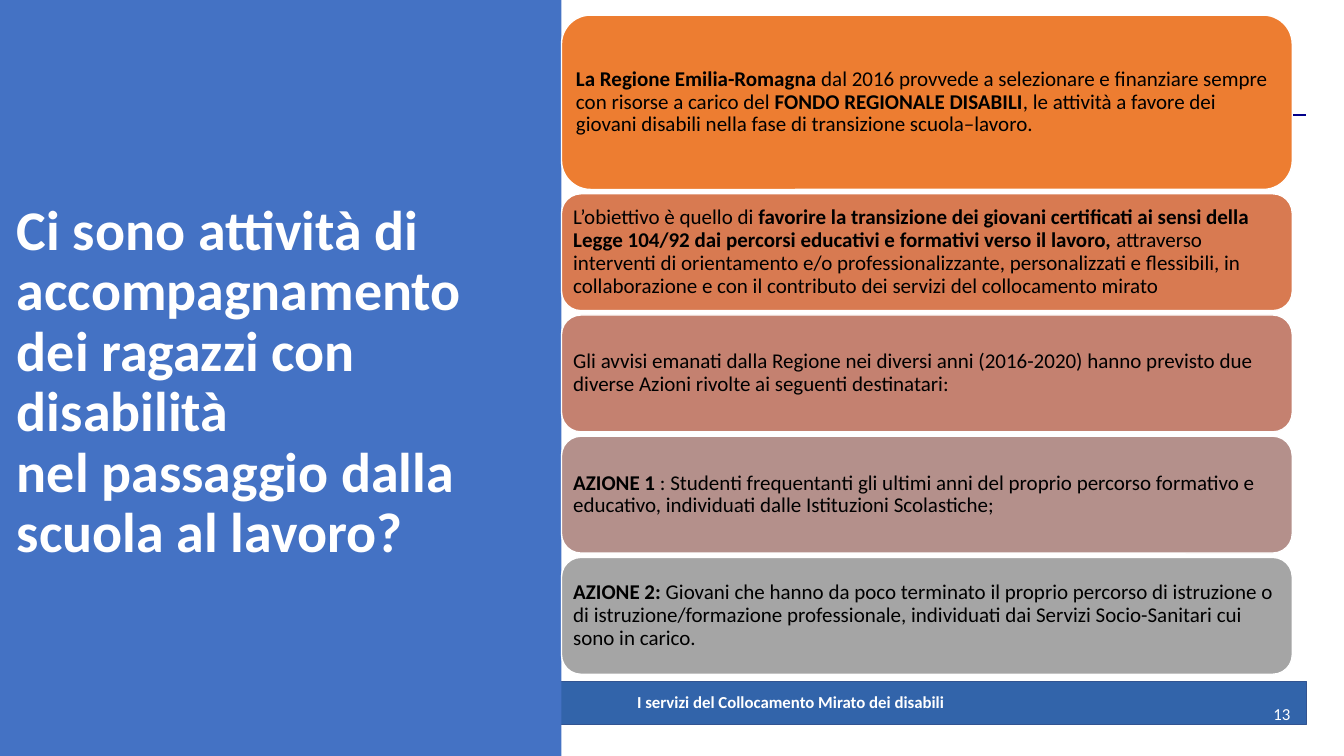
from dataclasses import dataclass

from lxml import etree
from pptx import Presentation, util as u
from pptx.dml.color import RGBColor
from pptx.enum import shapes, text
from pptx.oxml import ns


@dataclass(frozen=True)
class Theme:
    font: str = "Calibri"
    panel: str = "4472C4"
    bar: str = "3264AA"
    bar_edge: str = "325491"
    rule: str = "02008B"
    light: str = "FFFFFF"
    dark: str = "000000"
    cards: tuple = ("ED7D31", "D87A51", "C48170", "B4908B", "A5A5A5")
    title: int = 40
    body: int = 15
    small: int = 12


@dataclass(frozen=True)
class Box:
    x: float
    y: float
    w: float
    h: float

    def inner(self, x, y, w, h):
        return Box(self.x + x, self.y + y, w, h)

    def emu(self):
        return [u.Inches(v * CELL) for v in (self.x, self.y, self.w, self.h)]


T = Theme()
CELL = 0.1
SLIDE = Box(0, 0, 133.33, 75)
LEFT, CENTER, RIGHT = text.PP_ALIGN.LEFT, text.PP_ALIGN.CENTER, text.PP_ALIGN.RIGHT

TITLE = [
    "Ci sono attività di accompagnamento dei ragazzi con disabilità",
    "nel passaggio dalla scuola al lavoro?",
]
FOOTER = "I servizi del Collocamento Mirato dei disabili"
PAGE = "13"
CARDS = [
    [("La Regione Emilia-Romagna ", True),
     ("dal 2016 provvede a selezionare e finanziare sempre con risorse a carico del ", False),
     ("FONDO REGIONALE DISABILI", True),
     (", le attività a favore dei giovani disabili nella fase di transizione scuola–lavoro.", False)],
    [("L’obiettivo è quello di ", False),
     ("favorire la transizione dei giovani certificati ai sensi della Legge 104/92 "
      "dai percorsi educativi e formativi verso il lavoro, ", True),
     ("attraverso interventi di orientamento e/o professionalizzante, personalizzati e flessibili, "
      "in collaborazione e con il contributo dei servizi del collocamento mirato", False)],
    [("Gli avvisi emanati dalla Regione nei diversi anni (2016-2020) hanno previsto due "
      "diverse Azioni rivolte ai seguenti destinatari:", False)],
    [("AZIONE 1 ", True),
     (": Studenti frequentanti gli ultimi anni del proprio percorso formativo e educativo, "
      "individuati dalle Istituzioni Scolastiche;", False)],
    [("AZIONE 2:", True),
     (" Giovani che hanno da poco terminato il proprio percorso di istruzione o di "
      "istruzione/formazione professionale, individuati dai Servizi Socio-Sanitari cui "
      "sono in carico.", False)],
]


def rgb(value):
    return RGBColor.from_string(value)


def add_panel(s, box, kind, fill, edge=None):
    sp = s.shapes.add_shape(kind, *box.emu())
    sp.shadow.inherit = False
    sp.fill.solid()
    sp.fill.fore_color.rgb = rgb(fill)
    if edge:
        sp.line.color.rgb = rgb(edge)
        sp.line.width = u.Pt(1)
    else:
        sp.line.fill.background()
    return sp


def add_run(p, words, size, color, bold):
    r = p.add_run()
    r.text = words
    r.font.name = T.font
    r.font.size = u.Pt(size)
    r.font.bold = bold
    r.font.color.rgb = rgb(color)


def first_paragraph(sp, align=LEFT, spacing=0.9):
    tf = sp.text_frame
    tf.word_wrap = True
    tf.vertical_anchor = text.MSO_ANCHOR.MIDDLE
    p = tf.paragraphs[0]
    p.alignment = align
    p.line_spacing = spacing
    return p


def add_label(s, box, words, align, bold=False):
    p = first_paragraph(s.shapes.add_textbox(*box.emu()), align)
    add_run(p, words, T.small, T.light, bold)


def add_rule(s, box):
    x, y, w, _ = box.emu()
    line = s.shapes.add_connector(shapes.MSO_CONNECTOR.STRAIGHT, x, y, x + w, y)
    line.line.color.rgb = rgb(T.rule)
    line.line.width = u.Pt(1)
    etree.SubElement(line._element.spPr, ns.qn("a:effectLst"))


def add_footer(s, box):
    add_panel(s, box, shapes.MSO_SHAPE.RECTANGLE, T.bar, T.bar_edge)
    add_label(s, box.inner(40.2, 0, 68.5, box.h), FOOTER, CENTER, True)
    add_label(s, box.inner(106.1, 0.8, 18.9, 5.1), PAGE, RIGHT)


def add_title_panel(s, box):
    add_panel(s, box, shapes.MSO_SHAPE.RECTANGLE, T.panel)
    title = s.shapes.add_textbox(*box.inner(0.7, 16.6, 53.2, 42.9).emu())
    p = first_paragraph(title)
    for i, words in enumerate(TITLE):
        if i:
            p.add_line_break()
        add_run(p, words, T.title, T.light, True)


def add_cards(s, box):
    heights = [17.3] + [11.6] * (len(CARDS) - 1)
    gap = (box.h - sum(heights)) / (len(CARDS) - 1)
    top = 0
    for runs, fill, height in zip(CARDS, T.cards, heights):
        card = add_panel(s, box.inner(0, top, box.w, height),
                         shapes.MSO_SHAPE.ROUNDED_RECTANGLE, fill, T.light)
        tf = card.text_frame
        tf.margin_left = tf.margin_right = tf.margin_top = tf.margin_bottom = u.Inches(0.06)
        p = first_paragraph(card)
        for words, bold in runs:
            add_run(p, words, T.body, T.dark, bold)
        top += height + gap


def main():
    prs = Presentation()
    _, _, prs.slide_width, prs.slide_height = SLIDE.emu()
    s = prs.slides.add_slide(prs.slide_layouts[6])
    add_rule(s, SLIDE.inner(4, 11.4, 125.6, 0))
    add_footer(s, SLIDE.inner(4, 67.6, 125.6, 4.3))
    add_title_panel(s, SLIDE.inner(0, 0, 55.7, SLIDE.h))
    add_cards(s, SLIDE.inner(55.7, 1.5, 72.5, 65.4))
    prs.save("out.pptx")


if __name__ == "__main__":
    main()
